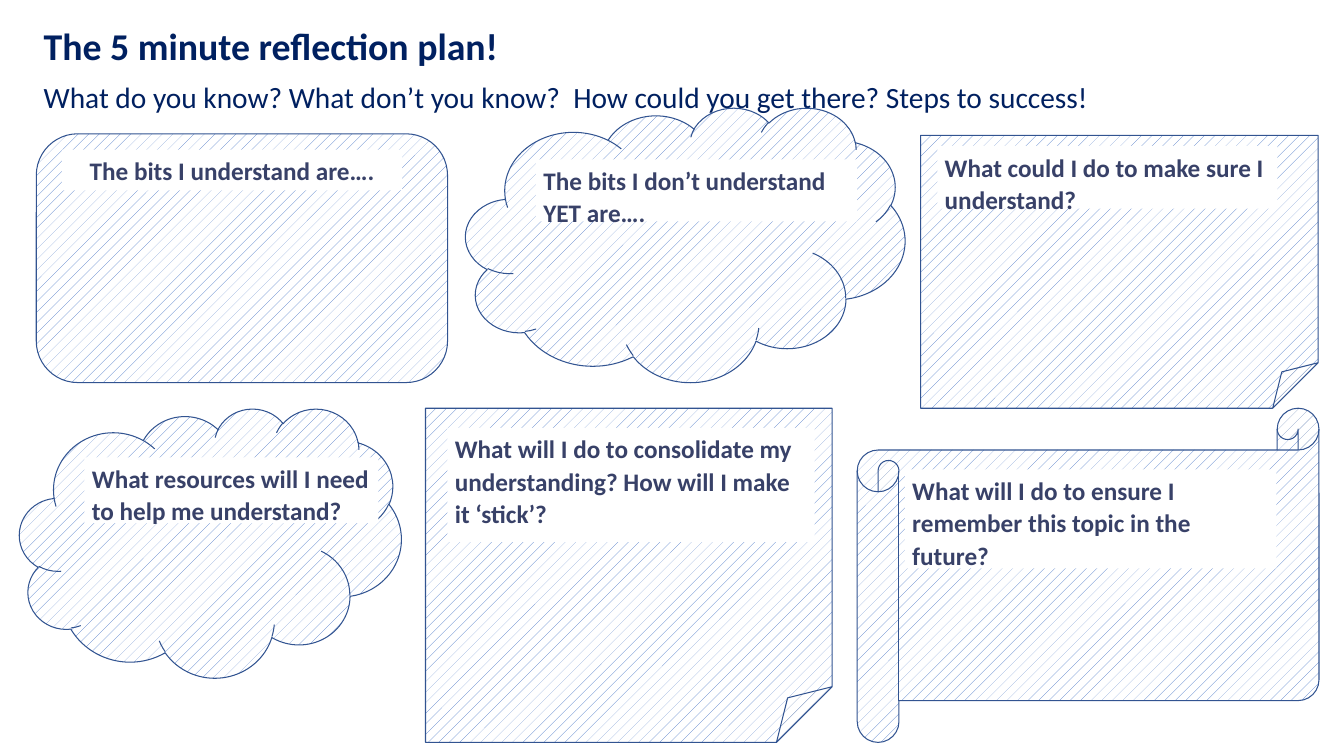
import collections

import pptx
import pptx.dml.color
import pptx.enum.dml
import pptx.enum.shapes
import pptx.enum.text
import pptx.util

SHAPES = pptx.enum.shapes.MSO_SHAPE
ALIGN = pptx.enum.text.PP_ALIGN
FONT = "Calibri"
NAVY, INK, BLUE, OUTLINE, WHITE = "002060", "384168", "4472C4", "325491", "FFFFFF"

Box = collections.namedtuple("Box", "left top width height")

# Panels in percent of the slide, labels in percent of their panel
PANELS = [
    (SHAPES.ROUNDED_RECTANGLE, (2.7, 17.7, 30.6, 32.9), (6.25, 6.4, 82.7, 16.4),
     "The bits I understand are….", ALIGN.CENTER),
    (SHAPES.CLOUD, (34.65, 14.2, 32.68, 36.3), (16, 19, 73.15, 22.6),
     "The bits I don’t understand YET are….", ALIGN.LEFT),
    (SHAPES.FOLDED_CORNER, (68.5, 17.9, 29.58, 36.1), (4.2, 3.9, 85.55, 23),
     "What could I do to make sure I understand?", ALIGN.LEFT),
    (SHAPES.CLOUD, (1.46, 54, 28.4, 35.6), (17, 18.25, 77, 24.45),
     "What resources will I need to help me understand?", ALIGN.LEFT),
    (SHAPES.FOLDED_CORNER, (31.66, 54, 30.26, 44.2), (5.4, 5.9, 90.3, 34.15),
     "What will I do to consolidate my understanding? How will I make it ‘stick’?", ALIGN.LEFT),
    (SHAPES.HORIZONTAL_SCROLL, (63.78, 54, 34.36, 44.2), (10.3, 18.3, 80.5, 29.65),
     "What will I do to ensure I remember this topic in the future?", ALIGN.LEFT),
]


def color(value):
    return pptx.dml.color.RGBColor.from_string(value)


def inside(box, shares):
    """Return the box that takes the given percentages of another box."""
    left, top, width, height = (share / 100 for share in shares)
    return Box(int(box.left + left * box.width), int(box.top + top * box.height),
               int(width * box.width), int(height * box.height))


def style_text(para, size, ink, bold):
    para.font.name = FONT
    para.font.size = pptx.util.Pt(size)
    para.font.bold = bold
    para.font.color.rgb = color(ink)


def add_heading(page, box):
    frame = page.shapes.add_textbox(*box).text_frame
    frame.word_wrap = True
    frame.text = ("The 5 minute reflection plan!\n"
                  "What do you know? What don’t you know?  How could you get there? Steps to success!")
    title, subtitle = frame.paragraphs
    style_text(title, 36, NAVY, True)
    style_text(subtitle, 28, NAVY, False)
    title.line_spacing = subtitle.line_spacing = 0.9
    subtitle.space_before = pptx.util.Pt(13.3)


def add_panel(page, box, kind, label_shares, prompt, alignment):
    # Hatched outline
    panel = page.shapes.add_shape(kind, *box)
    panel.shadow.inherit = False
    panel.fill.patterned()
    panel.fill.pattern = pptx.enum.dml.MSO_PATTERN.PERCENT_5
    panel.fill.fore_color.rgb = color(BLUE)
    panel.fill.back_color.rgb = color(WHITE)
    panel.line.color.rgb = color(OUTLINE)
    panel.line.width = pptx.util.Pt(1)

    # White label with the prompt
    label = page.shapes.add_shape(SHAPES.RECTANGLE, *inside(box, label_shares))
    label.shadow.inherit = False
    label.fill.solid()
    label.fill.fore_color.rgb = color(WHITE)
    label.line.fill.background()
    frame = label.text_frame
    frame.word_wrap = True
    frame.vertical_anchor = pptx.enum.text.MSO_ANCHOR.TOP
    frame.text = prompt
    para = frame.paragraphs[0]
    para.alignment = alignment
    para.line_spacing = 1.07
    para.space_after = pptx.util.Pt(8)
    style_text(para, 24, INK, True)


def main():
    deck = pptx.Presentation()
    deck.slide_width = pptx.util.Inches(17.78)
    deck.slide_height = pptx.util.Inches(10)
    page = deck.slides.add_slide(deck.slide_layouts[6])
    slide_box = Box(0, 0, deck.slide_width, deck.slide_height)

    add_heading(page, inside(slide_box, (2.7, 3.2, 93.5, 13.1)))
    for kind, shares, label_shares, prompt, alignment in PANELS:
        add_panel(page, inside(slide_box, shares), kind, label_shares, prompt, alignment)

    deck.save("out.pptx")


if __name__ == "__main__":
    main()
